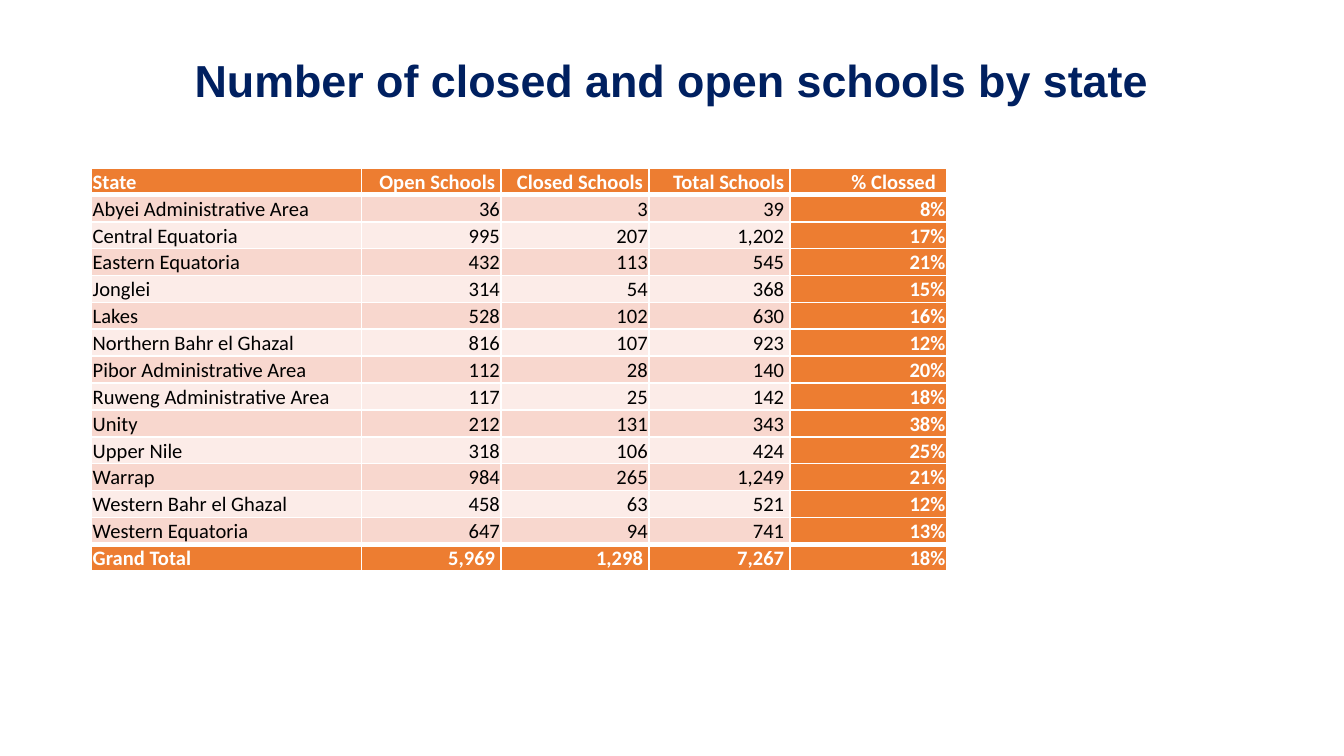
from dataclasses import dataclass
from typing import Any

from lxml.etree import SubElement
from pptx import Presentation
from pptx.dml.color import RGBColor
from pptx.enum.text import MSO_ANCHOR as Anchor, PP_ALIGN as Align
from pptx.oxml.ns import qn
from pptx.util import Emu, Pt

EMU_PER_PX = 4572
ORANGE, PEACH, BLUSH = "ED7D31", "F8D7CE", "FCECE8"
WHITE, BLACK, NAVY = "FFFFFF", "000000", "002060"

HEADINGS = ("State", "Open Schools", "Closed Schools", "Total Schools", "% Clossed")
STATES = (
    ("Abyei Administrative Area", "36", "3", "39", "8%"),
    ("Central Equatoria", "995", "207", "1,202", "17%"),
    ("Eastern Equatoria", "432", "113", "545", "21%"),
    ("Jonglei", "314", "54", "368", "15%"),
    ("Lakes", "528", "102", "630", "16%"),
    ("Northern Bahr el Ghazal", "816", "107", "923", "12%"),
    ("Pibor Administrative Area", "112", "28", "140", "20%"),
    ("Ruweng Administrative Area", "117", "25", "142", "18%"),
    ("Unity", "212", "131", "343", "38%"),
    ("Upper Nile", "318", "106", "424", "25%"),
    ("Warrap", "984", "265", "1,249", "21%"),
    ("Western Bahr el Ghazal", "458", "63", "521", "12%"),
    ("Western Equatoria", "647", "94", "741", "13%"),
)
TOTALS = ("Grand Total", "5,969", "1,298", "7,267", "18%")
COLUMN_WIDTHS = (402, 208, 220, 210, 233)
ROW_HEIGHT = 40
HEADING_INSETS = (2, 9, 9, 9, 16)
STATE_INSETS = (2, 2, 2, 9, 2)
TOTAL_INSETS = (2, 9, 9, 9, 2)


@dataclass(frozen=True)
class RowStyle:
    fill: str
    color: str
    bold: bool
    insets: tuple[int, ...]
    top_line: int = 1
    bottom_line: int = 1


def px(length: int) -> Emu:
    return Emu(length * EMU_PER_PX)


def rgb(color: str) -> RGBColor:
    return RGBColor.from_string(color)


def apply_format(target: Any, values: dict[str, Any]) -> None:
    for name, value in values.items():
        setattr(target, name, value)


def write(frame: Any, text: str, color: str, font: dict[str, Any], layout: dict[str, Any]) -> None:
    para = frame.paragraphs[0]
    apply_format(para, layout)
    span = para.add_run()
    span.text = text
    apply_format(span.font, font)
    span.font.color.rgb = rgb(color)


def add_title(page: Any, text: str) -> None:
    box = page.shapes.add_textbox(px(106), px(56), px(1786), px(136))
    apply_format(box.text_frame, {"word_wrap": True, "vertical_anchor": Anchor.MIDDLE})
    write(box.text_frame, text, NAVY,
          {"name": "Arial", "size": Pt(24), "bold": True},
          {"alignment": Align.CENTER, "line_spacing": 0.9, "space_after": Pt(6)})


def add_borders(cell: Any, style: RowStyle) -> None:
    properties = cell._tc.get_or_add_tcPr()
    widths = {"lnL": 1, "lnR": 1, "lnT": style.top_line, "lnB": style.bottom_line}
    for side, width in widths.items():
        line = SubElement(properties, qn(f"a:{side}"), w=str(Pt(width)))
        fill = SubElement(line, qn("a:solidFill"))
        SubElement(fill, qn("a:srgbClr"), val=WHITE)


def fill_cell(cell: Any, text: str, column: int, style: RowStyle) -> None:
    is_rate = column == len(COLUMN_WIDTHS) - 1
    add_borders(cell, style)
    cell.fill.solid()
    cell.fill.fore_color.rgb = rgb(ORANGE if is_rate else style.fill)
    apply_format(cell, {
        "vertical_anchor": Anchor.BOTTOM,
        "margin_left": px(2),
        "margin_top": px(2),
        "margin_right": px(style.insets[column]),
        "margin_bottom": px(0),
    })
    write(cell.text_frame, text, WHITE if is_rate else style.color,
          {"name": "Calibri", "size": Pt(11), "bold": is_rate or style.bold},
          {"alignment": Align.RIGHT if column else Align.LEFT})


def add_school_table(page: Any) -> None:
    body = [
        (values, RowStyle((PEACH, BLUSH)[index % 2], BLACK, False, STATE_INSETS,
                          top_line=1 if index else 3,
                          bottom_line=3 if index == len(STATES) - 1 else 1))
        for index, values in enumerate(STATES)
    ]
    rows = [
        (HEADINGS, RowStyle(ORANGE, WHITE, True, HEADING_INSETS, bottom_line=3)),
        *body,
        (TOTALS, RowStyle(ORANGE, WHITE, True, TOTAL_INSETS, top_line=3)),
    ]
    table = page.shapes.add_table(
        len(rows), len(COLUMN_WIDTHS), px(136), px(250),
        px(sum(COLUMN_WIDTHS)), px(ROW_HEIGHT * len(rows))).table
    apply_format(table, {"first_row": False, "horz_banding": False})
    for column, width in zip(table.columns, COLUMN_WIDTHS):
        column.width = px(width)
    for row, (values, style) in zip(table.rows, rows):
        row.height = px(ROW_HEIGHT)
        for column, (cell, text) in enumerate(zip(row.cells, values)):
            fill_cell(cell, text, column, style)


def main() -> None:
    deck = Presentation()
    apply_format(deck, {"slide_width": px(2000), "slide_height": px(1125)})
    page = deck.slides.add_slide(deck.slide_layouts[6])
    add_title(page, "Number of closed and open schools by state")
    add_school_table(page)
    deck.save("out.pptx")


if __name__ == "__main__":
    main()
